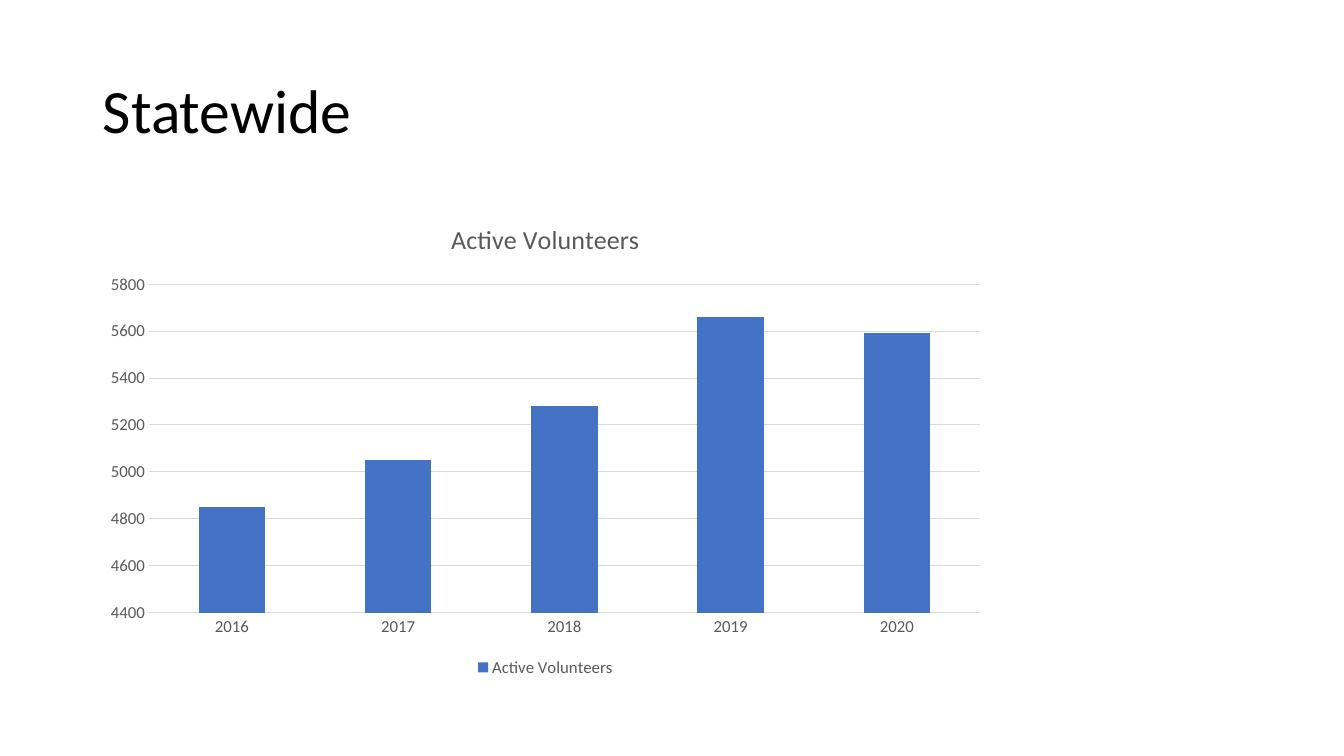
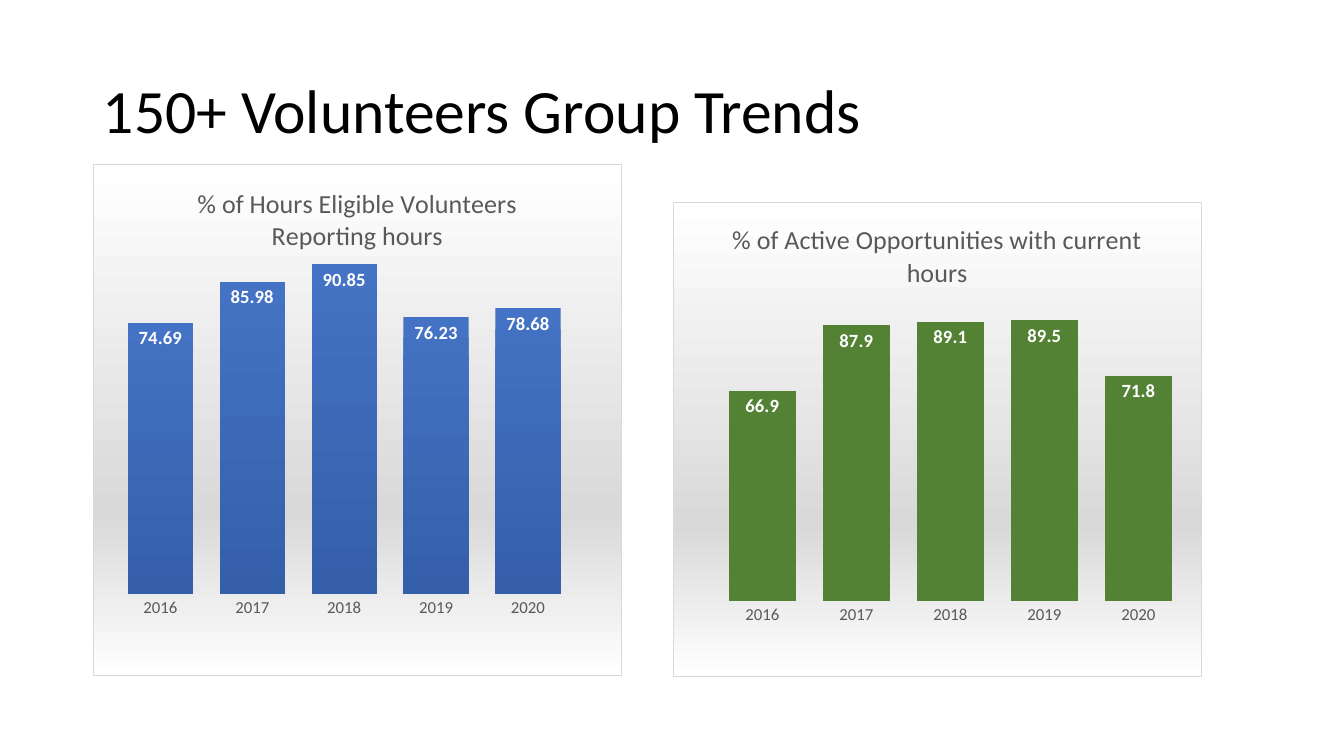
from lxml import etree
from pptx import Presentation
from pptx.chart.data import CategoryChartData
from pptx.dml.color import RGBColor
from pptx.enum.chart import XL_CHART_TYPE, XL_LABEL_POSITION, XL_LEGEND_POSITION, XL_TICK_MARK
from pptx.enum.text import MSO_ANCHOR, MSO_AUTO_SIZE, PP_ALIGN
from pptx.oxml.ns import qn
from pptx.util import Inches, Pt

COLUMNS = XL_CHART_TYPE.COLUMN_CLUSTERED
LABEL_INSIDE_END = XL_LABEL_POSITION.INSIDE_END
LEGEND_BOTTOM = XL_LEGEND_POSITION.BOTTOM
NO_TICKS = XL_TICK_MARK.NONE
MIDDLE = MSO_ANCHOR.MIDDLE
NO_AUTOFIT = MSO_AUTO_SIZE.NONE
LEFT = PP_ALIGN.LEFT

TITLE_ONLY = 5
FONT = "Calibri"
BLACK, WHITE, GREY, PALE = "000000", "FFFFFF", "595959", "D9D9D9"
BLUE, DARK_BLUE, GREEN = "4472C4", "355FA9", "548235"
PANEL_STOPS = [(0, WHITE), (68, PALE), (100, WHITE)]
YEARS = ["2016", "2017", "2018", "2019", "2020"]


def rgb(code):
    return RGBColor.from_string(code)


def add_gradient(properties, stops):
    """Add a top-to-bottom gradient of (percent, colour) stops to a shape properties element."""
    gradient = etree.SubElement(properties, qn("a:gradFill"))
    stop_list = etree.SubElement(gradient, qn("a:gsLst"))
    for percent, code in stops:
        stop = etree.SubElement(stop_list, qn("a:gs"), pos=str(percent * 1000))
        etree.SubElement(stop, qn("a:srgbClr"), val=code)
    etree.SubElement(gradient, qn("a:lin"), ang="5400000", scaled="0")


def style_chart_area(chart, stops=None):
    """Give the chart a gradient panel with a pale border, or neither fill nor border."""
    area = etree.Element(qn("c:spPr"))
    if stops:
        add_gradient(area, stops)
    else:
        etree.SubElement(area, qn("a:noFill"))
    border = etree.SubElement(area, qn("a:ln"), w=str(Pt(0.75)))
    if stops:
        fill = etree.SubElement(border, qn("a:solidFill"))
        etree.SubElement(fill, qn("a:srgbClr"), val=PALE)
    else:
        etree.SubElement(border, qn("a:noFill"))
    chart._chartSpace.find(qn("c:chart")).addnext(area)


def place_plot(chart, box):
    """Fix the inner plot area; box is x, y, width and height as shares of the chart."""
    plot_area = chart._chartSpace.find(".//" + qn("c:plotArea"))
    for old in plot_area.findall(qn("c:layout")):
        plot_area.remove(old)
    layout = etree.Element(qn("c:layout"))
    manual = etree.SubElement(layout, qn("c:manualLayout"))
    settings = [("layoutTarget", "inner"), ("xMode", "edge"), ("yMode", "edge")]
    for key, value in settings + list(zip("xywh", box)):
        etree.SubElement(manual, qn("c:" + key), val=str(value))
    plot_area.insert(0, layout)


class Deck:
    def __init__(self):
        self.presentation = Presentation()
        self.presentation.slide_width = Inches(13.33)
        self.presentation.slide_height = Inches(7.5)
        self.slide = None

    def style_font(self, font, size, color, bold=False):
        font.name = FONT
        font.size = Pt(size)
        font.bold = bold
        font.color.rgb = rgb(color)

    def add_slide(self, heading):
        layout = self.presentation.slide_layouts[TITLE_ONLY]
        self.slide = self.presentation.slides.add_slide(layout)
        title = self.slide.shapes.title
        title.left, title.top = Inches(0.92), Inches(0.4)
        title.width, title.height = Inches(11.5), Inches(1.45)
        frame = title.text_frame
        frame.text = heading
        frame.vertical_anchor = MIDDLE
        frame.auto_size = NO_AUTOFIT
        paragraph = frame.paragraphs[0]
        paragraph.alignment = LEFT
        paragraph.line_spacing = 0.9
        self.style_font(paragraph.font, 44, BLACK)

    def add_columns(self, box, heading, series_name, values, gap, color):
        """Add a column chart with the parts that every chart shares."""
        data = CategoryChartData()
        data.categories = YEARS
        data.add_series(series_name, values)
        place = [Inches(length) for length in box]
        chart = self.slide.shapes.add_chart(COLUMNS, *place, data).chart
        self.style_font(chart.font, 10, BLACK)
        chart.has_title = True
        chart.chart_title.include_in_layout = False
        chart.chart_title.text_frame.text = heading
        self.style_font(chart.chart_title.text_frame.paragraphs[0].font, 18.6, GREY)
        chart.has_legend = False

        plot = chart.plots[0]
        plot.gap_width = gap
        plot.vary_by_categories = False
        fill = plot.series[0].format.fill
        fill.solid()
        fill.fore_color.rgb = rgb(color)

        for axis in (chart.category_axis, chart.value_axis):
            axis.major_tick_mark = axis.minor_tick_mark = NO_TICKS
            axis.format.line.fill.background()
            self.style_font(axis.tick_labels.font, 12, GREY)
        return chart

    def add_scaled_columns(self, box, heading, values, low, high, step):
        """Add a column chart with a value scale, gridlines and a legend."""
        chart = self.add_columns(box, heading, heading, values, 150, BLUE)
        style_chart_area(chart)
        chart.plots[0].overlap = -27
        scale = chart.value_axis
        scale.minimum_scale, scale.maximum_scale, scale.major_unit = low, high, step
        scale.has_major_gridlines = True
        for line in (scale.major_gridlines.format.line, chart.category_axis.format.line):
            line.color.rgb = rgb(PALE)
            line.width = Pt(0.75)
        chart.has_legend = True
        chart.legend.position = LEGEND_BOTTOM
        chart.legend.include_in_layout = False
        self.style_font(chart.legend.font, 12, GREY)

    def add_percent_panel(self, box, plot_box, heading, values, color, end_color=None):
        """Add labelled percentage columns on a shaded panel."""
        chart = self.add_columns(box, heading, "Series 1", values, 41, color)
        style_chart_area(chart, PANEL_STOPS)
        place_plot(chart, plot_box)
        scale = chart.value_axis
        scale.minimum_scale, scale.maximum_scale = 0, 100
        scale.has_major_gridlines = False
        scale.visible = False
        plot = chart.plots[0]
        if end_color:
            properties = plot.series[0]._element.get_or_add_spPr()
            properties.remove(properties.find(qn("a:solidFill")))
            add_gradient(properties, [(0, color), (100, end_color)])
        plot.has_data_labels = True
        labels = plot.data_labels
        labels.show_value = True
        labels.position = LABEL_INSIDE_END
        self.style_font(labels.font, 13.3, WHITE, bold=True)


def main():
    deck = Deck()

    deck.add_slide("Statewide")
    deck.add_scaled_columns((0.92, 2, 8.98, 4.76), "Active Volunteers",
                            [4850, 5050, 5280, 5660, 5590], 4400, 5800, 200)

    deck.add_slide("150+ Volunteers Group Trends")
    deck.add_percent_panel((0.92, 1.63, 5.25, 5.08), (0.04, 0.13, 0.87, 0.71),
                           "% of Hours Eligible Volunteers Reporting hours",
                           [74.69, 85.98, 90.85, 76.23, 78.68], BLUE, DARK_BLUE)
    deck.add_percent_panel((6.67, 2, 5.25, 4.72), (0.08, 0.18, 0.89, 0.66),
                           "% of Active Opportunities with current hours",
                           [66.9, 87.9, 89.1, 89.5, 71.8], GREEN)

    deck.presentation.save("out.pptx")


if __name__ == "__main__":
    main()
